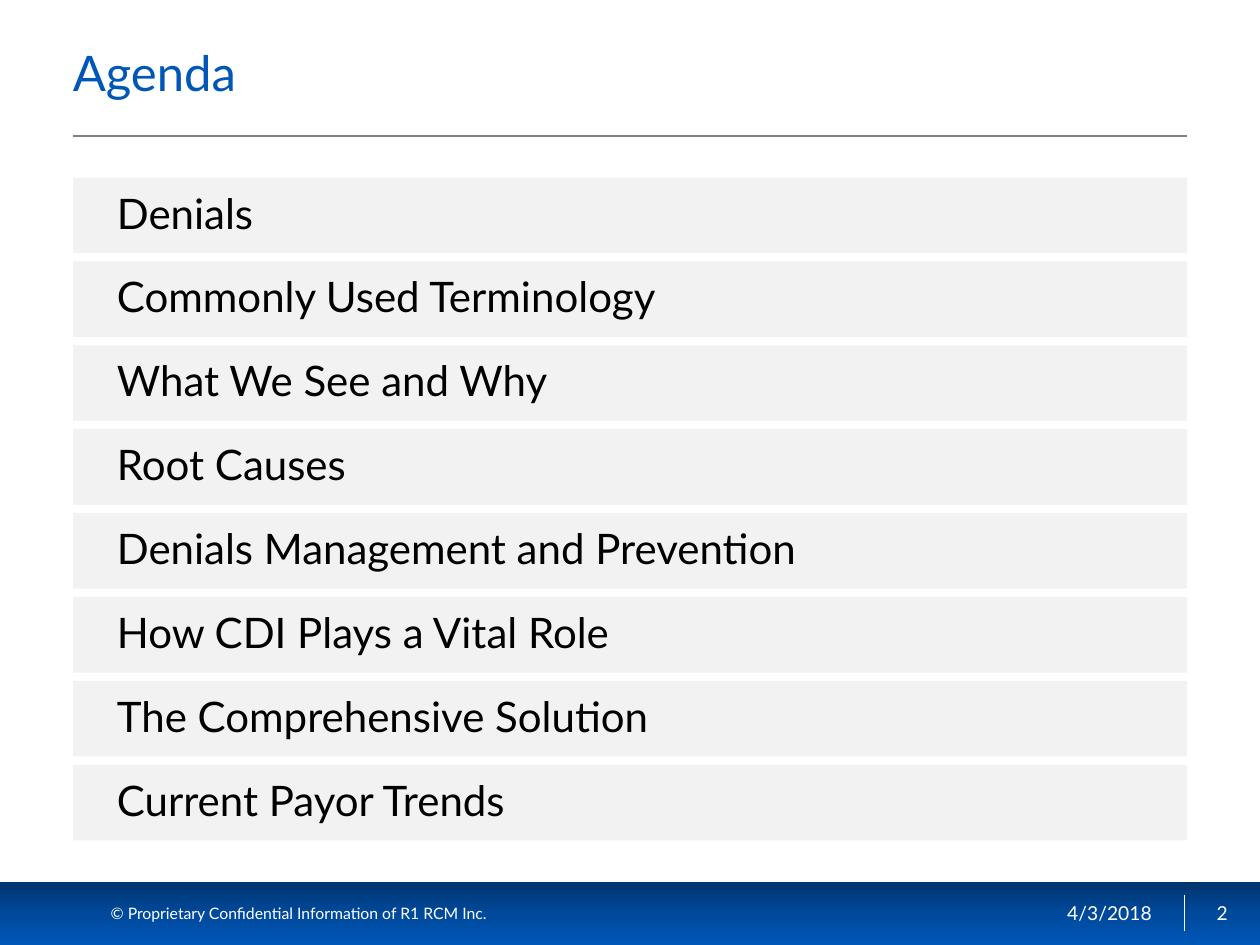
import copy
from dataclasses import dataclass

import pptx
import pptx.dml.color
import pptx.enum.shapes
import pptx.enum.text
import pptx.oxml.ns
import pptx.util
from lxml import etree

Inches = pptx.util.Inches
Align = pptx.enum.text.PP_ALIGN

FONT_NAME = "Lato"
COLORS = {
    "title": "0057B8",
    "rule": "808080",
    "bar": "F2F2F2",
    "text": "000000",
    "white": "FFFFFF",
}
FOOTER_GRADIENT = [(0, "00346D"), (0.5, "00499B"), (1, "0057B8")]
AGENDA = [
    "Denials",
    "Commonly Used Terminology",
    "What We See and Why",
    "Root Causes",
    "Denials Management and Prevention",
    "How CDI Plays a Vital Role",
    "The Comprehensive Solution",
    "Current Payor Trends",
]
MARGIN, CONTENT_WIDTH = 0.58, 8.84
BAR_TOP, BAR_HEIGHT, BAR_PITCH = 1.41, 0.6, 4.66 / 7


@dataclass
class Label:
    text: str
    left: float
    top: float
    width: float
    height: float
    size: float
    color: str = "white"
    align: Align = Align.LEFT
    line_spacing: float = 1.0
    indent: float = 0


@dataclass
class Rule:
    start: tuple[float, float]
    end: tuple[float, float]
    color: str
    weight: float


LABELS = [
    Label("4/3/2018", 6.75, 7.03, 2.49, 0.43, 11, align=Align.RIGHT),
    Label("2", 9.4, 7.03, 0.6, 0.43, 11, align=Align.CENTER),
    Label("© Proprietary Confidential Information of R1 RCM Inc.", 0.78, 7.12, 4.67, 0.25, 9),
    Label("Agenda", 0.48, 0.15, 8.94, 0.93, 28, "title", line_spacing=0.8),
]
RULES = [
    Rule((9.4, 7.1), (9.4, 7.39), "white", 0.75),
    Rule((MARGIN, 1.08), (MARGIN + CONTENT_WIDTH, 1.08), "rule", 1),
]


def rgb(hex_color: str) -> pptx.dml.color.RGBColor:
    return pptx.dml.color.RGBColor.from_string(hex_color)


def set_attributes(target, values: dict) -> None:
    for name, value in values.items():
        setattr(target, name, value)


def add_rectangle(slide, left: float, top: float, width: float, height: float):
    shape = slide.shapes.add_shape(
        pptx.enum.shapes.MSO_SHAPE.RECTANGLE,
        Inches(left), Inches(top), Inches(width), Inches(height),
    )
    shape.shadow.inherit = False
    shape.line.fill.background()
    return shape


def add_footer_band(slide) -> None:
    fill = add_rectangle(slide, 0, 7, 10, 0.5).fill
    fill.gradient()
    fill.gradient_angle = 270
    first_stop = fill.gradient_stops[0]._gs
    first_stop.addnext(copy.deepcopy(first_stop))
    for stop, (position, color) in zip(fill.gradient_stops, FOOTER_GRADIENT):
        stop.position = position
        stop.color.rgb = rgb(color)


def add_rule(slide, rule: Rule) -> None:
    connector = slide.shapes.add_connector(
        pptx.enum.shapes.MSO_CONNECTOR.STRAIGHT,
        *(Inches(value) for value in rule.start + rule.end),
    )
    connector.line.color.rgb = rgb(COLORS[rule.color])
    connector.line.width = pptx.util.Pt(rule.weight)
    properties = connector._element.spPr
    etree.SubElement(properties, pptx.oxml.ns.qn("a:effectLst"))


def write_label(shape, label: Label) -> None:
    frame = shape.text_frame
    set_attributes(frame, {
        "word_wrap": True,
        "vertical_anchor": pptx.enum.text.MSO_ANCHOR.MIDDLE,
    })
    paragraph = frame.paragraphs[0]
    set_attributes(paragraph, {
        "text": label.text,
        "alignment": label.align,
        "line_spacing": label.line_spacing,
    })
    if label.indent:
        paragraph._p.get_or_add_pPr().set("marL", str(Inches(label.indent)))
    font = paragraph.runs[0].font
    set_attributes(font, {"name": FONT_NAME, "size": pptx.util.Pt(label.size)})
    font.color.rgb = rgb(COLORS[label.color])


def add_label(slide, label: Label) -> None:
    box = slide.shapes.add_textbox(
        Inches(label.left), Inches(label.top), Inches(label.width), Inches(label.height)
    )
    write_label(box, label)


def add_agenda_bar(slide, label: Label) -> None:
    bar = add_rectangle(slide, label.left, label.top, label.width, label.height)
    bar.fill.solid()
    bar.fill.fore_color.rgb = rgb(COLORS["bar"])
    write_label(bar, label)


def main() -> None:
    presentation = pptx.Presentation()
    set_attributes(presentation, {"slide_width": Inches(10), "slide_height": Inches(7.5)})
    slide = presentation.slides.add_slide(presentation.slide_layouts[6])
    add_footer_band(slide)
    for rule in RULES:
        add_rule(slide, rule)
    for label in LABELS:
        add_label(slide, label)
    for index, topic in enumerate(AGENDA):
        top = BAR_TOP + index * BAR_PITCH
        add_agenda_bar(slide, Label(
            topic, MARGIN, top, CONTENT_WIDTH, BAR_HEIGHT, 24, "text",
            line_spacing=0.9, indent=0.25,
        ))
    presentation.save("out.pptx")


if __name__ == "__main__":
    main()
